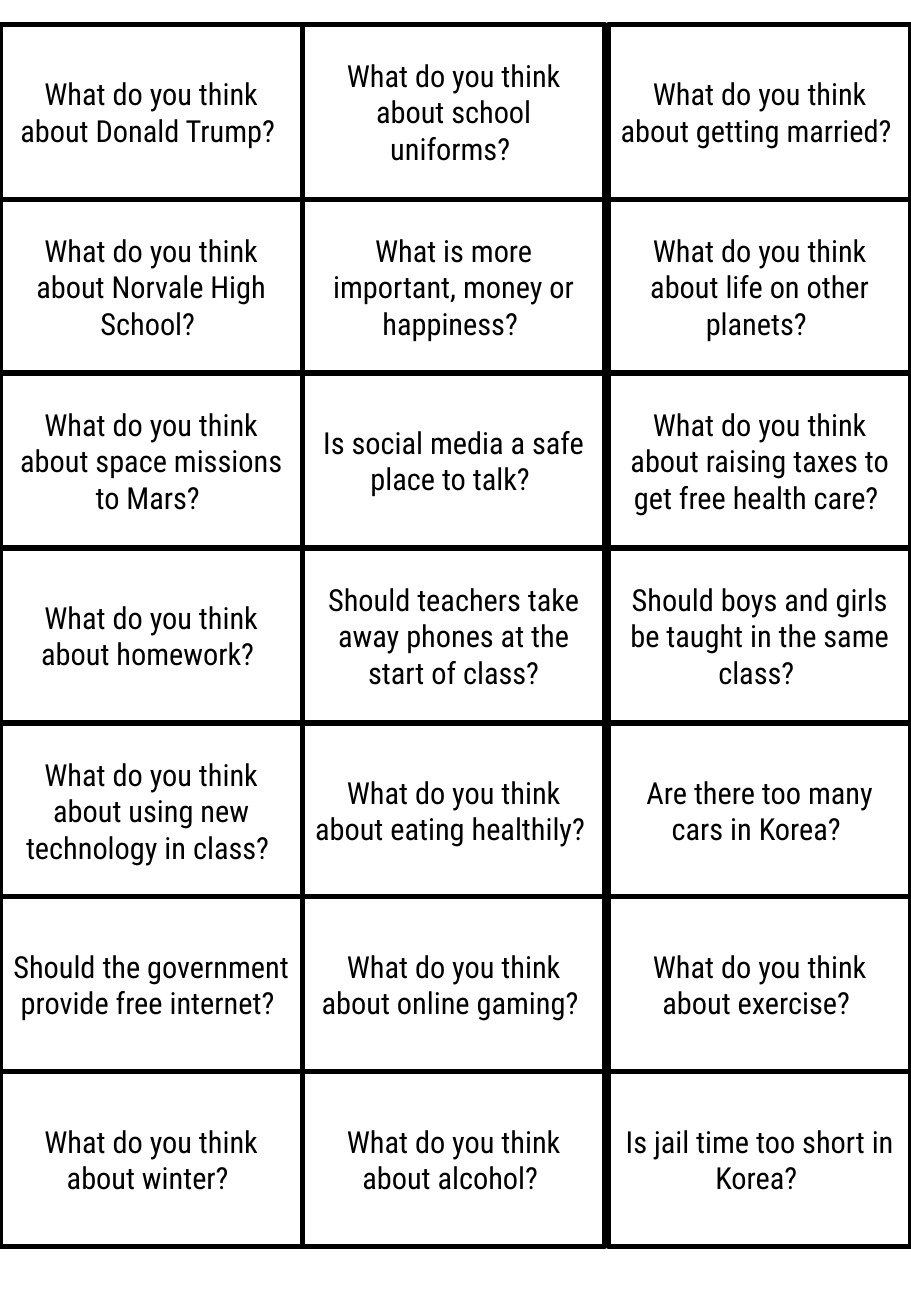
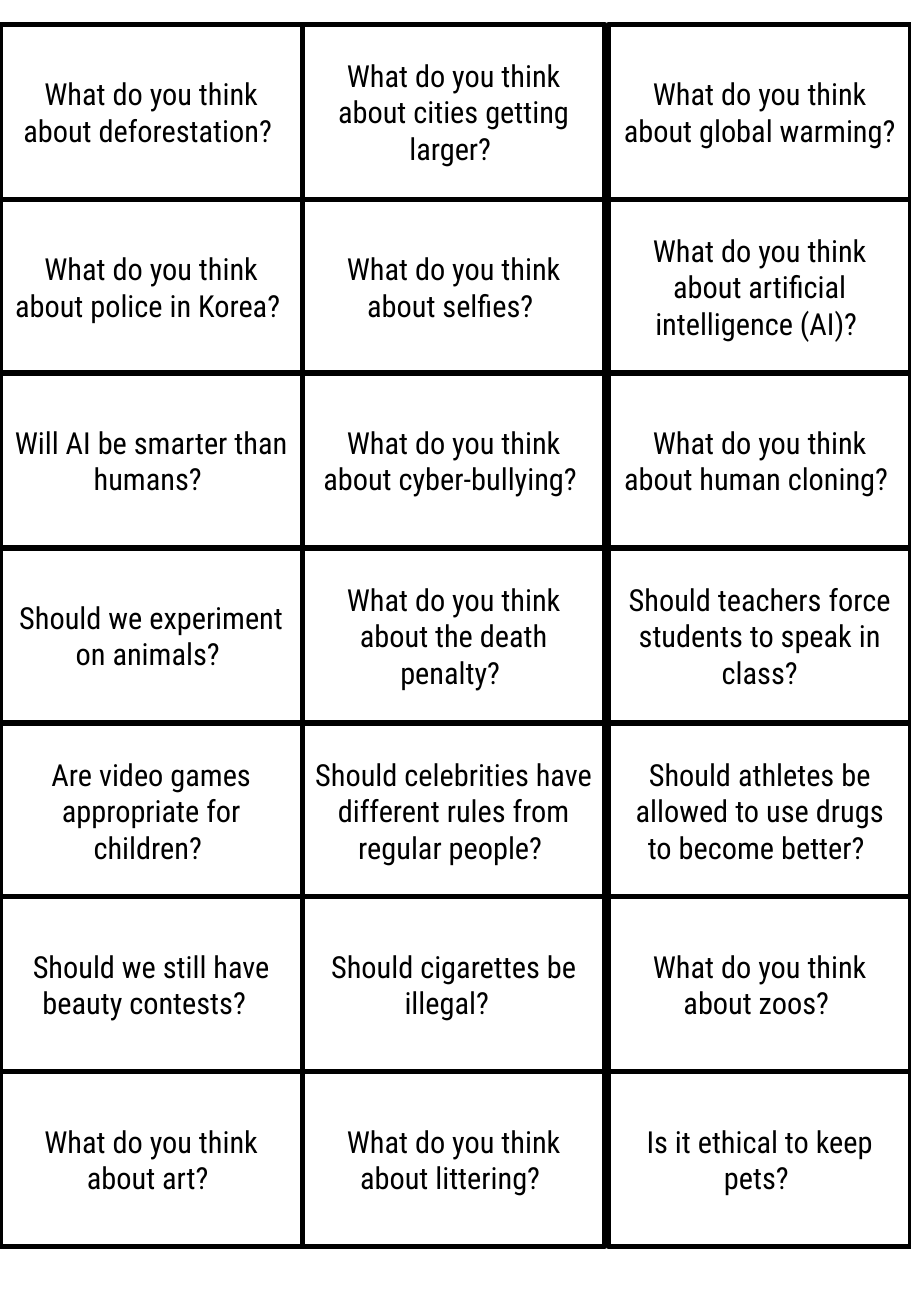
"""Build two printable sheets of discussion question cards."""
from dataclasses import dataclass

from pptx import Presentation
from pptx.dml.color import RGBColor
from pptx.enum.shapes import MSO_SHAPE as Shape
from pptx.enum.text import MSO_ANCHOR as Anchor, PP_ALIGN as Align
from pptx.util import Pt

SHEETS = [
    [
        ("What do you think about Donald Trump? ",
         "What do you think about school uniforms? ",
         "What do you think about getting married? "),
        ("What do you think about Norvale High School? ",
         "What is more important, money or happiness? ",
         "What do you think about life on other planets? "),
        ("What do you think about space missions to Mars? ",
         "Is social media a safe place to talk? ",
         "What do you think about raising taxes to get free health care? "),
        ("What do you think about homework? ",
         "Should teachers take away phones at the start of class?",
         "Should boys and girls be taught in the same class? "),
        ("What do you think about using new technology in class? ",
         "What do you think about eating healthily? ",
         "Are there too many cars in Korea? "),
        ("Should the government provide free internet? ",
         "What do you think about online gaming? ",
         "What do you think about exercise? "),
        ("What do you think about winter? ",
         "What do you think about alcohol? ",
         "Is jail time too short in Korea? "),
    ],
    [
        ("What do you think about deforestation? ",
         "What do you think about cities getting larger? ",
         "What do you think about global warming? "),
        ("What do you think about police in Korea? ",
         "What do you think about selfies? ",
         "What do you think about artificial intelligence (AI)? "),
        ("Will AI be smarter than humans? ",
         "What do you think about cyber-bullying? ",
         "What do you think about human cloning? "),
        ("Should we experiment on animals? ",
         "What do you think about the death penalty? ",
         "Should teachers force students to speak in class?"),
        ("Are video games appropriate for children? ",
         "Should celebrities have different rules from regular people? ",
         "Should athletes be allowed to use drugs to become better? "),
        ("Should we still have beauty contests?  ",
         "Should cigarettes be illegal?  ",
         "What do you think about zoos? "),
        ("What do you think about art? ",
         "What do you think about littering? ",
         "Is it ethical to keep pets? "),
    ],
]

EMU_PER_PX = 9144
SLIDE_WIDTH, SLIDE_HEIGHT = 750, 1083
CARD_WIDTH, CARD_HEIGHT = 249, 144
COLUMN_LEFTS = (0, CARD_WIDTH, SLIDE_WIDTH - CARD_WIDTH)
FIRST_TOP, LAST_TOP = 20, 882


@dataclass(frozen=True)
class Theme:
    font: str = "Roboto Condensed"
    text_size: Pt = Pt(18)
    border_width: Pt = Pt(3)
    ink: RGBColor = RGBColor(0, 0, 0)
    paper: RGBColor = RGBColor(255, 255, 255)


THEME = Theme()


def px(length):
    return length * EMU_PER_PX


def add_card(slide, left, top, question):
    shape = slide.shapes.add_shape(
        Shape.RECTANGLE, px(left), px(top), px(CARD_WIDTH), px(CARD_HEIGHT))
    shape.shadow.inherit = False
    shape.fill.solid()
    shape.fill.fore_color.rgb = THEME.paper
    shape.line.color.rgb = THEME.ink
    shape.line.width = THEME.border_width
    frame = shape.text_frame
    frame.word_wrap = True
    frame.vertical_anchor = Anchor.MIDDLE
    paragraph = frame.paragraphs[0]
    paragraph.alignment = Align.CENTER
    run = paragraph.add_run()
    run.text = question
    run.font.name = THEME.font
    run.font.size = THEME.text_size
    run.font.color.rgb = THEME.ink


def add_sheet(presentation, rows):
    slide = presentation.slides.add_slide(presentation.slide_layouts[6])
    row_step = (LAST_TOP - FIRST_TOP) / (len(rows) - 1)
    for index, questions in enumerate(rows):
        top = round(FIRST_TOP + index * row_step)
        for left, question in zip(COLUMN_LEFTS, questions):
            add_card(slide, left, top, question)


def main():
    presentation = Presentation()
    presentation.slide_width = px(SLIDE_WIDTH)
    presentation.slide_height = px(SLIDE_HEIGHT)
    for rows in SHEETS:
        add_sheet(presentation, rows)
    presentation.save("out.pptx")


if __name__ == "__main__":
    main()
